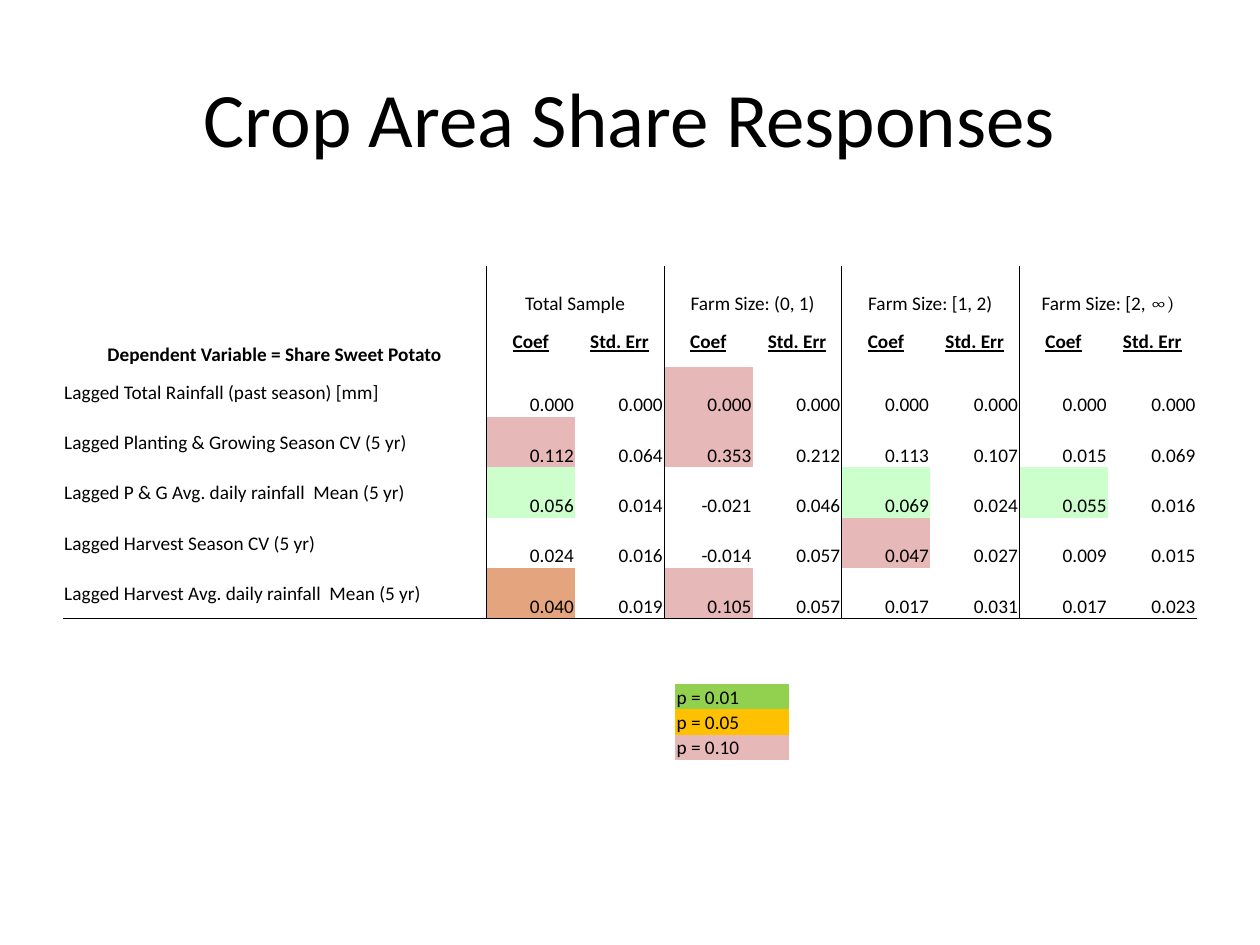
from lxml import etree
from pptx import Presentation
from pptx.dml.color import RGBColor
from pptx.enum.text import MSO_ANCHOR, PP_ALIGN
from pptx.oxml.ns import qn
from pptx.util import Inches, Pt

LEFT, CENTER, RIGHT = PP_ALIGN.LEFT, PP_ALIGN.CENTER, PP_ALIGN.RIGHT
MIDDLE, BOTTOM = MSO_ANCHOR.MIDDLE, MSO_ANCHOR.BOTTOM
PINK, GREEN, ORANGE = "E6B8B7", "CCFFCC", "E4A57E"
CELL_FORMAT = {"margin_left": Inches(0.01), "margin_right": Inches(0.01),
               "margin_top": Inches(0.01), "margin_bottom": 0}
FONT_FORMAT = {"name": "Calibri", "size": Pt(11), "bold": False, "underline": False}


def color(value):
    return RGBColor.from_string(value)


def fill_cell(cell, text, anchor, align, fill=None, borders=None, **font_format):
    for name, value in {**CELL_FORMAT, "vertical_anchor": anchor}.items():
        setattr(cell, name, value)
    properties = cell._tc.get_or_add_tcPr()
    for side in "LRTB":
        width = (borders or {}).get(side, 0)
        line = etree.SubElement(properties, qn(f"a:ln{side}"), w=str(Pt(width)))
        if width:
            solid = etree.SubElement(line, qn("a:solidFill"))
            etree.SubElement(solid, qn("a:srgbClr"), val="000000")
        else:
            etree.SubElement(line, qn("a:noFill"))
    if fill:
        cell.fill.solid()
        cell.fill.fore_color.rgb = color(fill)
    else:
        cell.fill.background()
    paragraph = cell.text_frame.paragraphs[0]
    paragraph.alignment = align
    plain, symbol, rest = text.partition("∞")
    for words, font_name in ((plain, "Calibri"), (symbol + rest, "Cambria")):
        if words:
            run = paragraph.add_run()
            run.text = words
            for name, value in {**FONT_FORMAT, **font_format, "name": font_name}.items():
                setattr(run.font, name, value)
            run.font.color.rgb = color("000000")


presentation = Presentation()
presentation.slide_width, presentation.slide_height = Inches(10), Inches(7.5)
slide = presentation.slides.add_slide(presentation.slide_layouts[6])

title = slide.shapes.add_textbox(Inches(0.5), Inches(0.3), Inches(9), Inches(1.25))
title.text_frame.word_wrap = True
title.text_frame.vertical_anchor = MIDDLE
paragraph = title.text_frame.paragraphs[0]
paragraph.text = "Crop Area Share Responses"
paragraph.alignment = CENTER
for name, value in {"name": "Calibri", "size": Pt(44)}.items():
    setattr(paragraph.font, name, value)
paragraph.font.color.rgb = color("000000")

legend_entries = [("p = 0.01", "92D050"), ("p = 0.05", "FFC000"), ("p = 0.10", PINK)]
legend = slide.shapes.add_table(
    3, 1, Inches(5.36), Inches(5.43), Inches(0.9), Inches(0.6)).table
legend.first_row = legend.horz_banding = False
for row, (text, fill) in enumerate(legend_entries):
    fill_cell(legend.cell(row, 0), text, BOTTOM, LEFT, fill)

groups = ["Total Sample", "Farm Size: (0, 1)", "Farm Size: [1, 2)", "Farm Size: [2, ∞)"]
results = [
    ("Lagged Total Rainfall (past season) [mm]",
     "0.000 0.000 0.000 0.000 0.000 0.000 0.000 0.000"),
    ("Lagged Planting & Growing Season CV (5 yr)",
     "0.112 0.064 0.353 0.212 0.113 0.107 0.015 0.069"),
    ("Lagged P & G Avg. daily rainfall  Mean (5 yr)",
     "0.056 0.014 -0.021 0.046 0.069 0.024 0.055 0.016"),
    ("Lagged Harvest Season CV (5 yr)",
     "0.024 0.016 -0.014 0.057 0.047 0.027 0.009 0.015"),
    ("Lagged Harvest Avg. daily rainfall  Mean (5 yr)",
     "0.040 0.019 0.105 0.057 0.017 0.031 0.017 0.023"),
]
highlights = {(2, 3): PINK, (3, 1): PINK, (3, 3): PINK, (4, 1): GREEN, (4, 5): GREEN,
              (4, 7): GREEN, (5, 5): PINK, (6, 1): ORANGE, (6, 3): PINK}

header = ["Dependent Variable = Share Sweet Potato"]
for group in groups:
    header += [group, ""]
rows = [header, [""] + ["Coef", "Std. Err"] * len(groups)]
rows += [[label] + values.split() for label, values in results]

table = slide.shapes.add_table(
    len(rows), 9, Inches(0.5), Inches(2.11), Inches(9), Inches(2.8)).table
table.first_row = table.horz_banding = False
for column, table_column in enumerate(table.columns):
    table_column.width = Inches(0.705 if column else 3.36)
for table_row in table.rows:
    table_row.height = Inches(0.4)
table.cell(0, 0).merge(table.cell(1, 0))
for column in range(1, 9, 2):
    table.cell(0, column).merge(table.cell(0, column + 1))

for row, texts in enumerate(rows):
    for column, text in enumerate(texts):
        borders = {}
        if column % 2:
            borders["L"] = 0.5
        if column < 7 and (row == 0 or column % 2 == 0):
            borders["R"] = 0.5
        if row == len(rows) - 1:
            borders["B"] = 1
        label_cell = column == 0 and row > 1
        anchor = MIDDLE if row == 1 or label_cell else BOTTOM
        align = CENTER if row < 2 else LEFT if label_cell else RIGHT
        fill_cell(table.cell(row, column), text, anchor, align,
                  highlights.get((row, column)), borders,
                  bold=row == 1 or (row == 0 and column == 0), underline=row == 1)

presentation.save("out.pptx")
